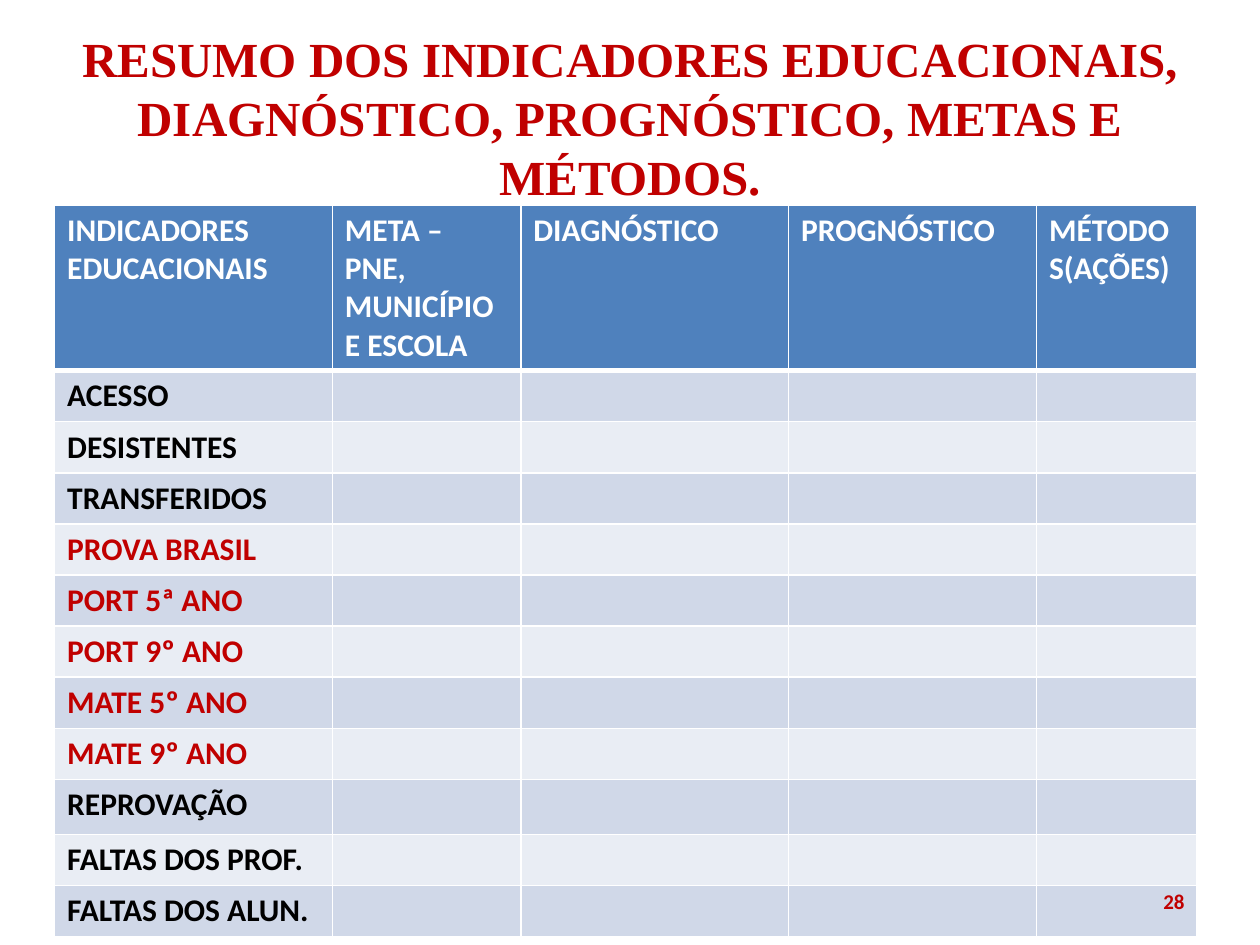
import lxml.etree
import pptx
import pptx.dml.color
import pptx.enum.text
import pptx.oxml.ns
import pptx.util

Pt = pptx.util.Pt
PP_ALIGN = pptx.enum.text.PP_ALIGN
COLORS = {"red": "C00000", "black": "000000", "white": "FFFFFF",
          "header": "4F81BD", "odd": "D0D8E8", "even": "E9EDF4"}


def write(tf, text, size, color, font="Calibri", align=PP_ALIGN.LEFT):
    p = tf.paragraphs[0]
    p.text = text
    p.alignment = align
    p.font.name = font
    p.font.size = Pt(size)
    p.font.bold = True
    p.font.color.rgb = pptx.dml.color.RGBColor.from_string(COLORS[color])


def add_text(slide, box, *style):
    sp = slide.shapes.add_textbox(*[Pt(v) for v in box])
    tf = sp.text_frame
    tf.word_wrap = True
    tf.vertical_anchor = pptx.enum.text.MSO_ANCHOR.MIDDLE
    write(tf, *style)


prs = pptx.Presentation()
prs.slide_width, prs.slide_height = Pt(720), Pt(540)
s = prs.slides.add_slide(prs.slide_layouts[6])

# Title
add_text(s, (36, 21.6, 648, 90),
         "RESUMO DOS INDICADORES EDUCACIONAIS, DIAGNÓSTICO, PROGNÓSTICO, "
         "METAS E MÉTODOS.", 28, "red", "Times New Roman", PP_ALIGN.CENTER)

# Table content: header labels, then one indicator per row
headers = ["INDICADORES EDUCACIONAIS", "META – PNE, MUNICÍPIO E ESCOLA",
           "DIAGNÓSTICO", "PROGNÓSTICO", "MÉTODOS(AÇÕES)"]
indicators = [("ACESSO", "black"), ("DESISTENTES", "black"),
              ("TRANSFERIDOS", "black"), ("PROVA BRASIL", "red"),
              ("PORT 5ª ANO", "red"), ("PORT 9º ANO", "red"),
              ("MATE 5º ANO", "red"), ("MATE 9º ANO", "red"),
              ("REPROVAÇÃO", "black"), ("FALTAS DOS PROF.", "black"),
              ("FALTAS DOS ALUN.", "black")]
widths = [158.7, 107.7, 153, 141.7, 91.4]
heights = [94.8] + [29.2] * 8 + [31.5] + [29.2] * 2

# Table grid
table = s.shapes.add_table(len(heights), len(widths), Pt(31.2), Pt(117),
                           Pt(sum(widths)), Pt(sum(heights))).table
for column, width in zip(table.columns, widths):
    column.width = Pt(width)
for row, height in zip(table.rows, heights):
    row.height = Pt(height)

# Cell borders, fills and text
for i, row in enumerate(table.rows):
    for j, cell in enumerate(row.cells):
        tcPr = cell._tc.get_or_add_tcPr()
        for side in ("L", "R", "T", "B"):
            thick = (i, side) in ((0, "B"), (1, "T"))
            ln = lxml.etree.SubElement(tcPr, pptx.oxml.ns.qn("a:ln" + side),
                                       w=str(Pt(3 if thick else 1)))
            fill = lxml.etree.SubElement(ln, pptx.oxml.ns.qn("a:solidFill"))
            lxml.etree.SubElement(fill, pptx.oxml.ns.qn("a:srgbClr"),
                                  val=COLORS["white"])
        band = "header" if i == 0 else "odd" if i % 2 else "even"
        cell.fill.solid()
        cell.fill.fore_color.rgb = pptx.dml.color.RGBColor.from_string(COLORS[band])
        if i == 0:
            write(cell.text_frame, headers[j], 18, "white")
        elif j == 0:
            text, color = indicators[i - 1]
            write(cell.text_frame, text, 18, color)

# Slide number
add_text(s, (516, 500.5, 168, 28.8), "28", 12, "red", "Calibri", PP_ALIGN.RIGHT)

prs.save("out.pptx")
